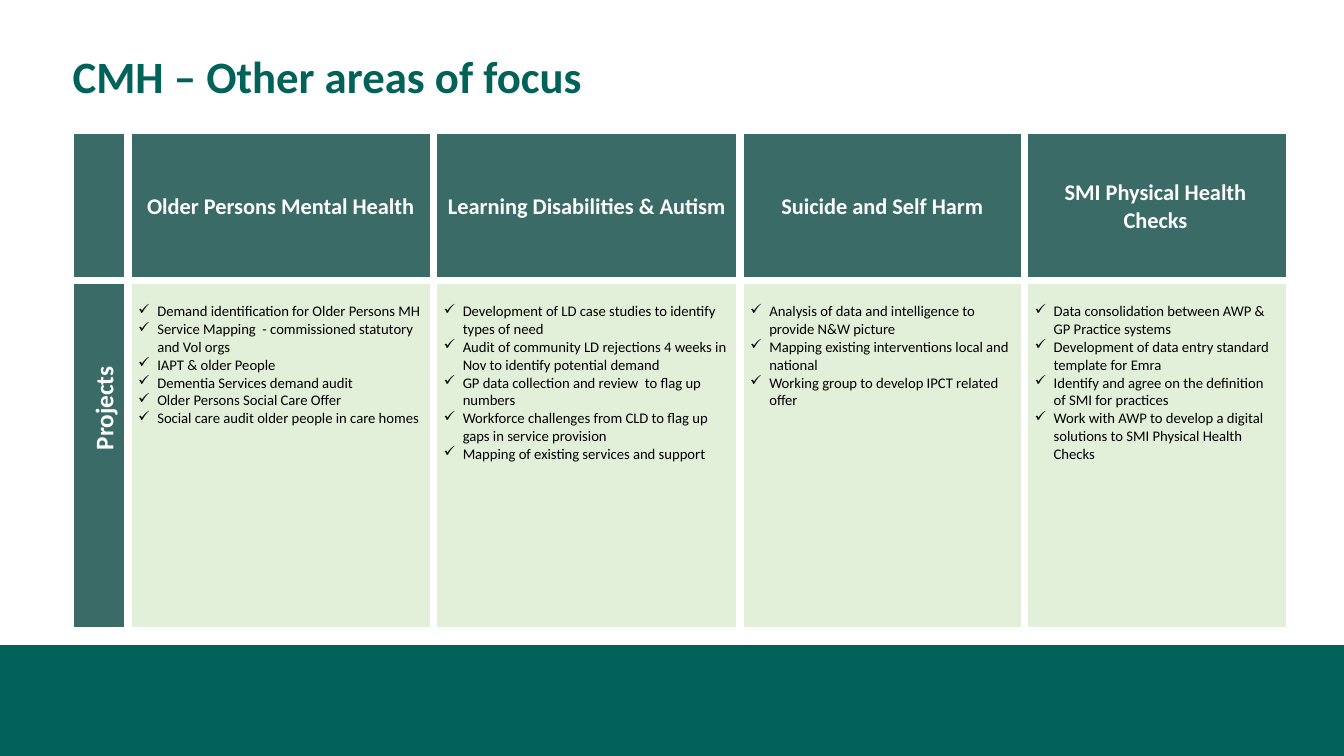
from dataclasses import dataclass

import lxml.etree
import pptx
import pptx.dml.color
import pptx.enum.shapes
import pptx.enum.text
import pptx.oxml.ns
import pptx.util

ALIGN = pptx.enum.text.PP_ALIGN
ANCHOR = pptx.enum.text.MSO_ANCHOR
SLIDE_WIDTH = pptx.util.Inches(13.33)
SLIDE_HEIGHT = pptx.util.Inches(7.5)


@dataclass(frozen=True)
class Theme:
    font: str = "Calibri"
    brand: str = "016259"
    heading_fill: str = "3A6B66"
    project_fill: str = "E2F0D9"
    white: str = "FFFFFF"
    black: str = "000000"
    title_size: float = 32
    side_size: float = 18
    heading_size: float = 16
    project_size: float = 10.5
    inner_border: float = 6
    outer_border: float = 1


@dataclass(frozen=True)
class Area:
    """Position and size in percent of the slide."""
    left: float
    top: float
    width: float
    height: float


@dataclass(frozen=True)
class Focus:
    """One table column; its width is in percent of the slide."""
    heading: str
    width: float
    projects: tuple[str, ...]


THEME = Theme()
TITLE_AREA = Area(4.65, 5.73, 50, 8.53)
BAND_AREA = Area(0, 85.33, 100, 14.67)
SIDE_AREA = Area(3.6, 50.93, 8.18, 5.33)
TABLE_LEFT, TABLE_TOP = 5.48, 17.6
SIDE_WIDTH = 4.05
ROW_HEIGHTS = (19.47, 46)

FOCUSES = (
    Focus("Older Persons Mental Health", 22.73, (
        "Demand identification for Older Persons MH",
        "Service Mapping  - commissioned statutory and Vol orgs",
        "IAPT & older People",
        "Dementia Services demand audit",
        "Older Persons Social Care Offer",
        "Social care audit older people in care homes",
    )),
    Focus("Learning Disabilities & Autism", 22.81, (
        "Development of LD case studies to identify types of need",
        "Audit of community LD rejections 4 weeks in Nov to identify potential demand",
        "GP data collection and review  to flag up numbers",
        "Workforce challenges from CLD to flag up gaps in service provision",
        "Mapping of existing services and support",
    )),
    Focus("Suicide and Self Harm", 21.16, (
        "Analysis of data and intelligence to provide N&W picture",
        "Mapping existing interventions local and national",
        "Working group to develop IPCT related offer",
    )),
    Focus("SMI Physical Health Checks", 19.5, (
        "Data consolidation between AWP & GP Practice systems",
        "Development of data entry standard template for Emra",
        "Identify and agree on the definition of SMI for practices",
        "Work with AWP to develop a digital solutions to SMI Physical Health Checks",
    )),
)


def across(share: float) -> int:
    return round(SLIDE_WIDTH * share / 100)


def down(share: float) -> int:
    return round(SLIDE_HEIGHT * share / 100)


def place(area: Area) -> tuple[int, int, int, int]:
    return across(area.left), down(area.top), across(area.width), down(area.height)


def rgb(code: str) -> pptx.dml.color.RGBColor:
    return pptx.dml.color.RGBColor.from_string(code)


def write(para, text: str, *, size: float, color: str, bold: bool = False,
          align=ALIGN.LEFT, bullet: str = "") -> None:
    para.alignment = align
    span = para.add_run()
    span.text = text
    span.font.name = THEME.font
    span.font.size = pptx.util.Pt(size)
    span.font.bold = bold
    span.font.color.rgb = rgb(color)
    if bullet:
        indent = pptx.util.Inches(0.19)
        properties = para._p.get_or_add_pPr()
        properties.set("marL", str(indent))
        properties.set("indent", str(-indent))
        mark = lxml.etree.SubElement(properties, pptx.oxml.ns.qn("a:buChar"))
        mark.set("char", bullet)


def set_borders(cell, widths: dict[str, float]) -> None:
    """Give the cell white borders; the lines come before the fill."""
    qn = pptx.oxml.ns.qn
    properties = cell._tc.get_or_add_tcPr()
    for index, side in enumerate("LRTB"):
        line = lxml.etree.Element(qn(f"a:ln{side}"), w=str(pptx.util.Pt(widths[side])))
        fill = lxml.etree.SubElement(line, qn("a:solidFill"))
        lxml.etree.SubElement(fill, qn("a:srgbClr"), val=THEME.white)
        properties.insert(index, line)


def add_title(page, text: str) -> None:
    title = page.shapes.title
    title.left, title.top, title.width, title.height = place(TITLE_AREA)
    frame = title.text_frame
    frame.auto_size = pptx.enum.text.MSO_AUTO_SIZE.NONE
    frame.word_wrap = True
    frame.vertical_anchor = ANCHOR.MIDDLE
    write(frame.paragraphs[0], text, size=THEME.title_size, color=THEME.brand, bold=True)


def add_band(page) -> None:
    band = page.shapes.add_shape(pptx.enum.shapes.MSO_SHAPE.RECTANGLE, *place(BAND_AREA))
    band.shadow.inherit = False
    band.fill.solid()
    band.fill.fore_color.rgb = rgb(THEME.brand)
    band.line.fill.background()


def add_focus_table(page, focuses: tuple[Focus, ...]) -> None:
    widths = [SIDE_WIDTH, *(focus.width for focus in focuses)]
    area = Area(TABLE_LEFT, TABLE_TOP, sum(widths), sum(ROW_HEIGHTS))
    table = page.shapes.add_table(len(ROW_HEIGHTS), len(widths), *place(area)).table
    table.first_row = table.horz_banding = False
    for column, width in zip(table.columns, widths):
        column.width = across(width)
    for row, height in zip(table.rows, ROW_HEIGHTS):
        row.height = down(height)

    # Fills and borders: thick between cells, thin around the table
    last_row, last_column = len(ROW_HEIGHTS) - 1, len(widths) - 1
    for r in range(last_row + 1):
        for c in range(last_column + 1):
            cell = table.cell(r, c)
            is_project = r > 0 and c > 0
            cell.fill.solid()
            cell.fill.fore_color.rgb = rgb(THEME.project_fill if is_project else THEME.heading_fill)
            edges = {"L": c == 0, "R": c == last_column, "T": r == 0, "B": r == last_row}
            set_borders(cell, {side: THEME.outer_border if outer else THEME.inner_border
                               for side, outer in edges.items()})

    # Headings and project lists
    for c, focus in enumerate(focuses, start=1):
        heading, projects = table.cell(0, c), table.cell(1, c)
        heading.vertical_anchor = ANCHOR.MIDDLE
        write(heading.text_frame.paragraphs[0], focus.heading, size=THEME.heading_size,
              color=THEME.white, bold=True, align=ALIGN.CENTER)
        projects.margin_top = down(3)
        frame = projects.text_frame
        for index, project in enumerate(focus.projects):
            para = frame.add_paragraph() if index else frame.paragraphs[0]
            write(para, project, size=THEME.project_size, color=THEME.black, bullet="✓")


def add_side_label(page, text: str) -> None:
    box = page.shapes.add_textbox(*place(SIDE_AREA))
    box.rotation = 270
    box.text_frame.word_wrap = True
    write(box.text_frame.paragraphs[0], text, size=THEME.side_size, color=THEME.white, bold=True)


def main() -> None:
    deck = pptx.Presentation()
    deck.slide_width, deck.slide_height = SLIDE_WIDTH, SLIDE_HEIGHT
    page = deck.slides.add_slide(deck.slide_layouts.get_by_name("Title Only"))
    add_title(page, "CMH – Other areas of focus")
    add_band(page)
    add_focus_table(page, FOCUSES)
    add_side_label(page, "Projects")
    deck.save("out.pptx")


if __name__ == "__main__":
    main()
